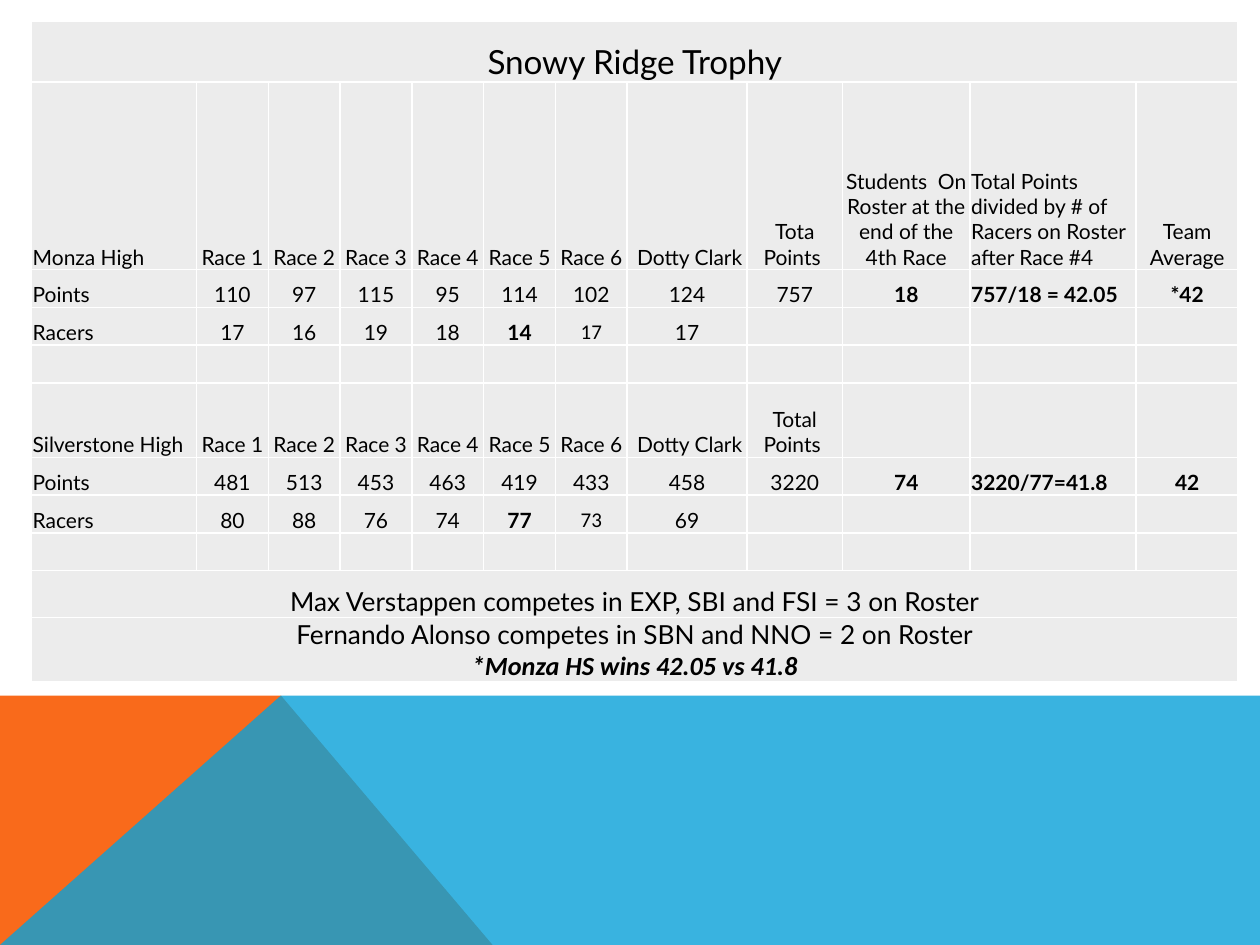
from lxml.etree import SubElement
from pptx import Presentation
from pptx.dml.color import RGBColor
from pptx.enum.text import MSO_ANCHOR as ANCHOR, PP_ALIGN as ALIGN
from pptx.oxml import parse_xml
from pptx.oxml.ns import nsdecls, qn
from pptx.util import Inches, Pt

WIDTH, HEIGHT = 10, 7.5
HORIZON, PEAK = 5.52, 2.23
COLUMNS = [1.31] + [0.57] * 6 + [0.95, 0.76, 1.01, 1.32, 0.81]
TEAM_ROWS = [0.3] * 3
ROWS = [0.48, 1.49, *TEAM_ROWS, 0.59, *TEAM_ROWS, 0.37, 0.37]
LEFT_COLUMNS = (0, 10)
RACES = [f"Race {n}" for n in range(1, 7)] + [" Dotty Clark"]

TEAMS = [
    [
        ["Monza High", *RACES, "Tota Points ",
         "Students  On Roster at the end of the 4th Race",
         "Total Points divided by # of Racers on Roster after Race #4",
         "Team Average"],
        ["Points", "110", "97", "115", "95", "114", "102", "124", "757",
         "18", "757/18 = 42.05", "*42"],
        ["Racers", "17", "16", "19", "18", "14", "17", "17"],
    ],
    [
        ["Silverstone High", *RACES, "Total Points "],
        ["Points", "481", "513", "453", "463", "419", "433", "458", "3220",
         "74", "3220/77=41.8", "42"],
        ["Racers", "80", "88", "76", "74", "77", "73", "69"],
    ],
]


def color(value):
    return RGBColor.from_string(value)


def add_text(p, text, size=12, font="Lato", bold=False, italic=False, align=ALIGN.CENTER):
    p.alignment = align
    if not text:
        SubElement(p._p, qn("a:endParaRPr"), sz=str(size * 100))
        return
    r = p.add_run()
    r.text = text
    r.font.size = Pt(size)
    r.font.name = font
    r.font.bold = bold
    r.font.italic = italic
    r.font.color.rgb = color("000000")


def add_polygon(slide, points, fill, opacity=100):
    builder = slide.shapes.build_freeform(
        Inches(points[0][0]), Inches(points[0][1]))
    builder.add_line_segments([(Inches(x), Inches(y)) for x, y in points[1:]])
    sp = builder.convert_to_shape()
    sp.shadow.inherit = False
    sp.line.fill.background()
    sp.fill.solid()
    sp.fill.fore_color.rgb = color(fill)
    if opacity < 100:
        rgb = sp._element.spPr.find(f".//{qn('a:srgbClr')}")
        SubElement(rgb, qn("a:alpha"), val=str(opacity * 1000))


def style_cell(cell):
    cell.fill.solid()
    cell.fill.fore_color.rgb = color("ECECEC")
    cell.vertical_anchor = ANCHOR.BOTTOM
    cell.margin_left = cell.margin_right = cell.margin_top = Inches(0.01)
    cell.margin_bottom = 0
    for i, side in enumerate("LRTB"):
        border = parse_xml(
            f'<a:ln{side} {nsdecls("a")} w="{Pt(1)}"><a:solidFill>'
            f'<a:srgbClr val="FFFFFF"/></a:solidFill></a:ln{side}>')
        cell._tc.get_or_add_tcPr().insert(i, border)


def add_grid(slide):
    frame = slide.shapes.add_table(
        len(ROWS), len(COLUMNS), Inches(0.25), Inches(0.17),
        Inches(sum(COLUMNS)), Inches(sum(ROWS)))
    table = frame.table
    table.first_row = table.horz_banding = False
    for column, width in zip(table.columns, COLUMNS):
        column.width = Inches(width)
    for row, height in zip(table.rows, ROWS):
        row.height = Inches(height)
    for cell in table.iter_cells():
        style_cell(cell)
    return table


def fill_team(table, top, team):
    for i, values in enumerate(team + [[]]):
        values = values + [""] * (len(COLUMNS) - len(values))
        kind = values[0]
        for j, text in enumerate(values):
            add_text(
                table.cell(top + i, j).text_frame.paragraphs[0], text,
                font="Calibri" if kind == "Racers" and j == 6 else "Lato",
                bold=(kind == "Points" and j > 8) or (kind == "Racers" and j == 5),
                align=ALIGN.LEFT if j in LEFT_COLUMNS else ALIGN.CENTER)


def add_banner(table, row, text, **fmt):
    cell = table.cell(row, 0)
    cell.merge(table.cell(row, len(COLUMNS) - 1))
    add_text(cell.text_frame.paragraphs[0], text, **fmt)
    return cell.text_frame


def main():
    prs = Presentation()
    prs.slide_width, prs.slide_height = Inches(WIDTH), Inches(HEIGHT)
    slide = prs.slides.add_slide(prs.slide_layouts[6])

    add_polygon(slide, [(0, HEIGHT), (0, HORIZON), (PEAK, HORIZON), (3.91, HEIGHT)],
                "F96A1B")
    add_polygon(slide, [(0, HEIGHT), (PEAK, HORIZON), (WIDTH, HORIZON), (WIDTH, HEIGHT)],
                "08A1D9", opacity=80)

    table = add_grid(slide)
    add_banner(table, 0, "Snowy Ridge Trophy", size=19)
    for i, team in enumerate(TEAMS):
        fill_team(table, 1 + 4 * i, team)
    add_banner(table, 9, "Max Verstappen competes in EXP, SBI and FSI = 3 on Roster", size=15)
    tf = add_banner(table, 10, "Fernando Alonso competes in SBN and NNO = 2 on Roster", size=15)
    add_text(tf.add_paragraph(), "*Monza HS wins 42.05 vs 41.8",
             size=15, font="Calibri", bold=True, italic=True)

    prs.save("out.pptx")


if __name__ == "__main__":
    main()
